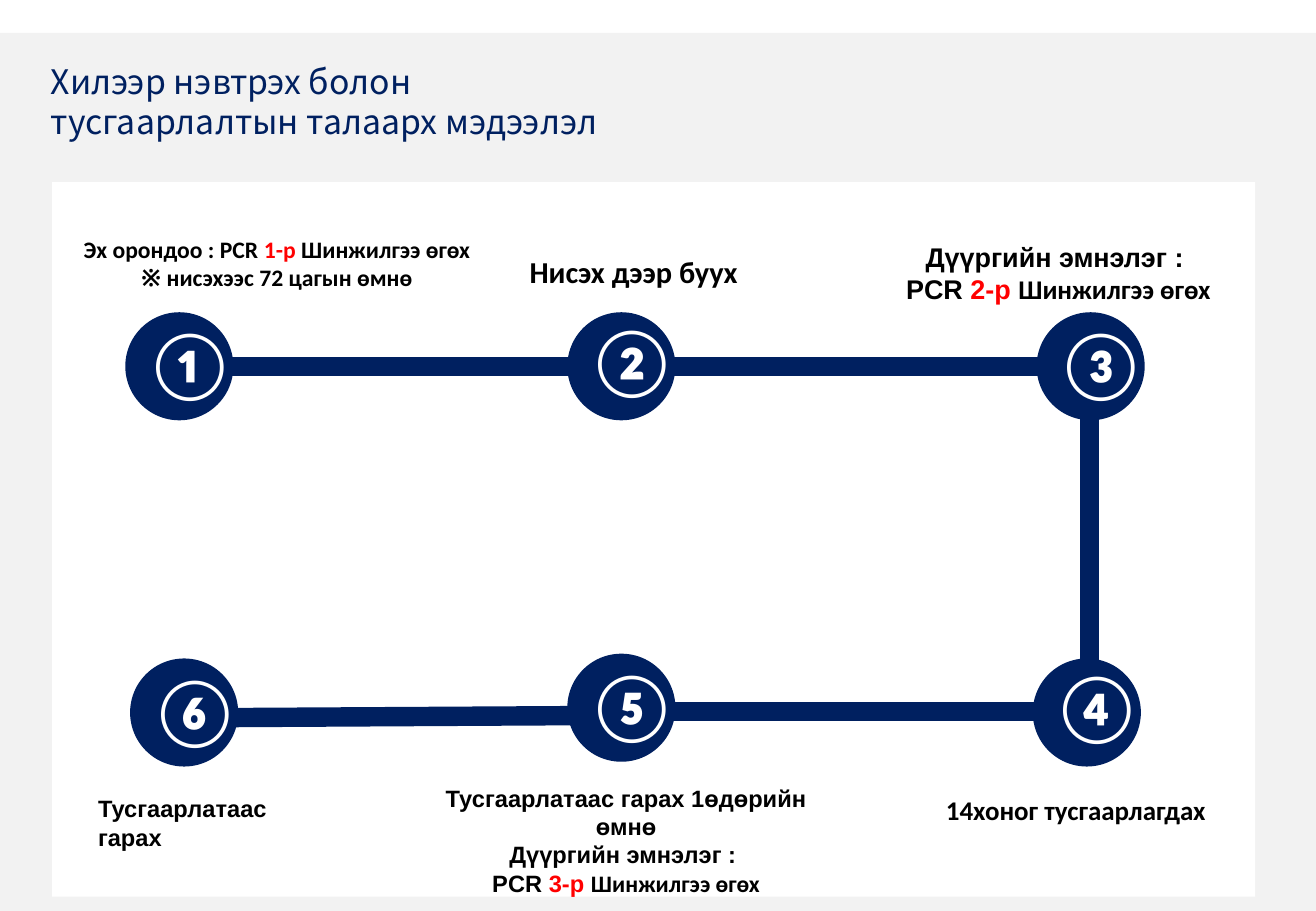
"""Build the slide on border entry and quarantine steps."""
from lxml.etree import SubElement
from pptx import Presentation
from pptx.dml.color import RGBColor as RGB
from pptx.enum.shapes import MSO_CONNECTOR as LINK, MSO_SHAPE as SHAPE
from pptx.enum.text import PP_ALIGN as ALIGN
from pptx.oxml.ns import qn
from pptx.util import Cm, Pt

NAVY = RGB(0x00, 0x20, 0x60)
GREY = RGB(0xF2, 0xF2, 0xF2)
WHITE = RGB(0xFF, 0xFF, 0xFF)
BLACK = RGB(0x00, 0x00, 0x00)
RED = RGB(0xFF, 0x00, 0x00)
NOTO = "Noto Sans CJK KR"

deck = Presentation()
deck.slide_width, deck.slide_height = Cm(27.51), Cm(19.05)
slide = deck.slides.add_slide(deck.slide_layouts[6])
shapes = slide.shapes


def write(lines, box, size=14, face="Calibri", color=BLACK, bold=True, align=ALIGN.CENTER):
    """Add a text box; each line is a list of (text, changes) runs."""
    frame = shapes.add_textbox(*map(Cm, box)).text_frame
    frame.word_wrap = True
    for i, line in enumerate(lines):
        para = frame.paragraphs[0] if i == 0 else frame.add_paragraph()
        para.alignment = align
        for text, look in line:
            run = para.add_run()
            run.text = text
            font = run.font
            font.size, font.bold = Pt(size), bold
            font.color.rgb = look.get("color", color)
            font.name = look.get("face", face)
            SubElement(run._r.get_or_add_rPr(), qn("a:ea"), typeface=NOTO)


def draw(kind, box, color):
    """Add a plain filled shape without outline."""
    form = shapes.add_shape(kind, *map(Cm, box))
    form.shadow.inherit = False
    form.fill.solid()
    form.fill.fore_color.rgb = color
    form.line.fill.background()


draw(SHAPE.RECTANGLE, (0, 0.69, 27.51, 18.36), GREY)
draw(SHAPE.RECTANGLE, (1.09, 3.81, 25.15, 14.94), WHITE)
write([[("Хилээр нэвтрэх болон", {})], [("тусгаарлалтын талаарх мэдээлэл", {})]],
      (0.81, 1.14, 20.93, 3.33), size=20, face=NOTO, color=NAVY, bold=False, align=ALIGN.LEFT)

links = [
    (LINK.STRAIGHT, (12.8, 14.96, 4.04, 15.01), 11.5),
    (LINK.ELBOW, (3.53, 7.67, 13.28, 14.88), 11.25),
]
for kind, ends, width in links:
    link = shapes.add_connector(kind, *map(Cm, ends))
    link.line.color.rgb = NAVY
    link.line.width = Pt(width)
    props = link._element.spPr
    SubElement(props, qn("a:effectLst"))
    if kind == LINK.ELBOW:
        guides = props.find(qn("a:prstGeom")).get_or_add_avLst()
        SubElement(guides, qn("a:gd"), name="adj1", fmla="val 197400")

dots = [
    ("①", 2.62, 6.53, 0.05),
    ("②", 11.86, 6.53, 0),
    ("③", 21.67, 6.53, 0.05),
    ("④", 21.59, 13.77, 0),
    ("⑤", 11.86, 13.67, 0.07),
    ("⑥", 2.72, 13.77, 0.07),
]
for mark, left, top, drop in dots:
    draw(SHAPE.OVAL, (left, top, 2.26, 2.26), NAVY)
    write([[(mark, {})]], (left + 0.17, top + drop, 1.95, 1.96),
          size=40, color=WHITE, align=ALIGN.LEFT)

red = {"color": RED}
test = ("Шинжилгээ өгөх", {"face": "Calibri"})
clinic = [("Дүүргийн эмнэлэг : ", {})]
write([[("Эх орондоо : PCR ", {}), ("1-р ", red), test], [("※ нисэхээс 72 цагын өмнө", {})]],
      (1.47, 4.78, 8.64, 1.45))
write([[("Нисэх дээр буух", {})]], (10.82, 5.16, 4.95, 1.02), size=18, align=ALIGN.LEFT)
write([clinic, [("PCR ", {}), ("2-р ", red), test]],
      (18.62, 4.9, 7.01, 2.49), size=16, face="Arial")
write([[("14хоног тусгаарлагдах", {})]], (19.48, 16.48, 6.02, 0.94), size=16)
write([[("Тусгаарлатаас гарах 1өдөрийн өмнө", {})], clinic,
       [("PCR ", {}), ("3-р ", red), test]], (8.38, 16.26, 9.42, 2.6), face="Arial")
write([[("Тусгаарлатаас гарах", {})]], (1.8, 16.48, 5.46, 0.86), face="Arial", align=ALIGN.LEFT)

deck.save("out.pptx")
